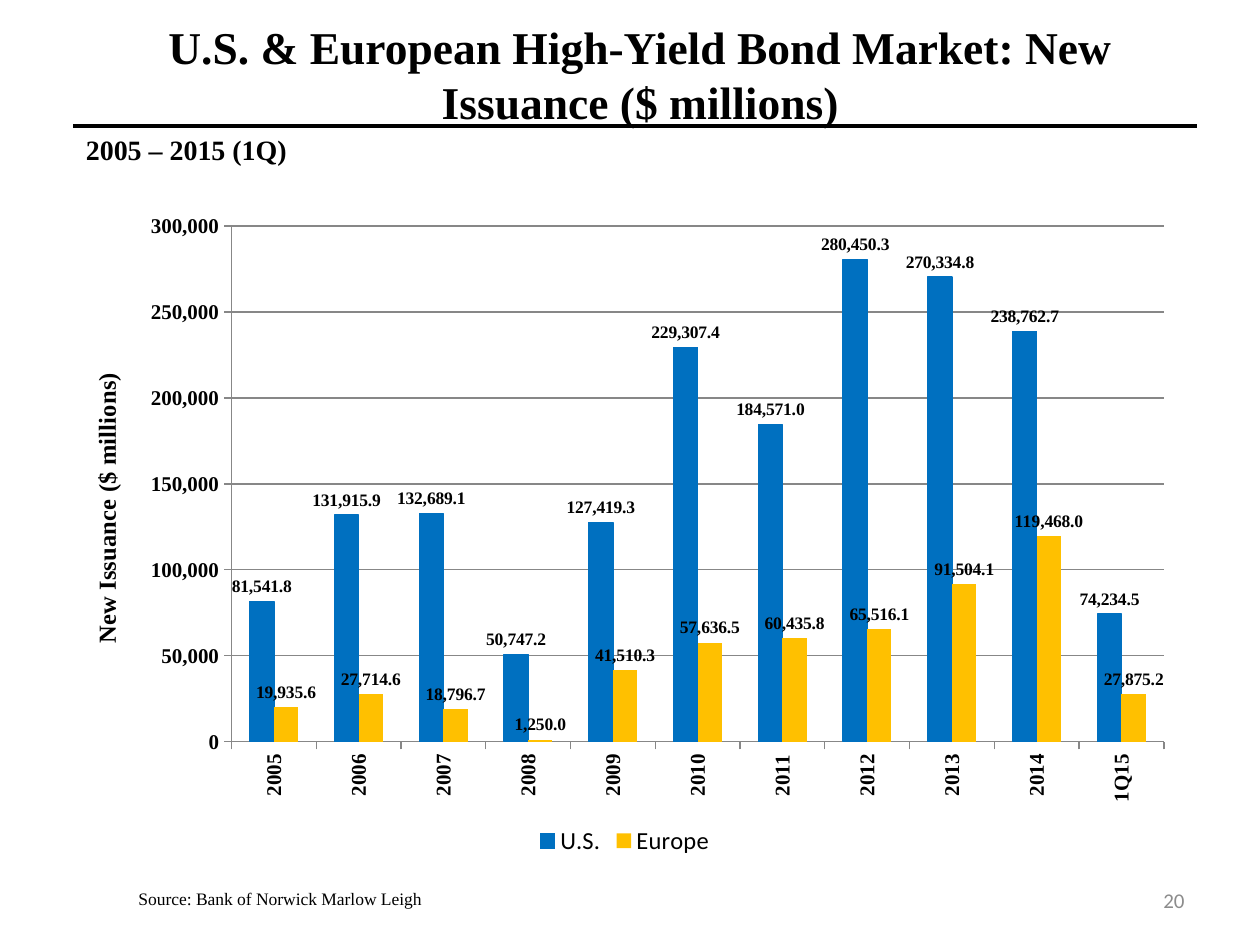
from lxml.etree import SubElement
from pptx import Presentation
from pptx.chart.data import CategoryChartData
from pptx.dml.color import RGBColor
from pptx.enum.chart import XL_CHART_TYPE, XL_LABEL_POSITION, XL_LEGEND_POSITION, XL_TICK_MARK
from pptx.enum.shapes import MSO_CONNECTOR
from pptx.enum.text import MSO_ANCHOR, PP_ALIGN
from pptx.oxml.ns import qn
from pptx.util import Pt

YEARS = [str(year) for year in range(2005, 2015)] + ["1Q15"]
US = [81541.8, 131915.9, 132689.1, 50747.2, 127419.3, 229307.4,
      184571, 280450.3, 270334.8, 238762.7, 74234.5]
EUROPE = [19935.6, 27714.6, 18796.7, 1250, 41510.3, 57636.5,
          60435.8, 65516.1, 91504.1, 119468, 27875.2]


def color(value):
    return RGBColor.from_string(value)


def set_font(font, size, name, bold=False, fill="000000"):
    font.size, font.name, font.bold = Pt(size), name, bold
    font.color.rgb = color(fill)


def write(tf, text, size=12, name="Times New Roman", bold=False,
          fill="000000", align=PP_ALIGN.LEFT, anchor=MSO_ANCHOR.TOP):
    tf.word_wrap = True
    tf.vertical_anchor = anchor
    p = tf.paragraphs[0]
    p.alignment = align
    r = p.add_run()
    r.text = text
    set_font(r.font, size, name, bold, fill)


class SlideBuilder:
    serif, sans = "Times New Roman", "Calibri"
    ink, grid = "000000", "878787"

    def __init__(self, prs):
        self.s = prs.slides.add_slide(prs.slide_layouts[6])

    def text(self, x, y, w, h, text, **fmt):
        sp = self.s.shapes.add_textbox(Pt(x), Pt(y), Pt(w), Pt(h))
        write(sp.text_frame, text, **fmt)

    def rule(self, x1, x2, y, width):
        line = self.s.shapes.add_connector(
            MSO_CONNECTOR.STRAIGHT, Pt(x1), Pt(y), Pt(x2), Pt(y))
        line.line.color.rgb = color(self.ink)
        line.line.width = Pt(width)
        SubElement(line._element.spPr, qn("a:effectLst"))

    def column_chart(self, x, y, w, h, cats, series, title, top, step, plot):
        data = CategoryChartData()
        data.categories = cats
        for name, values, _ in series:
            data.add_series(name, values)
        chart = self.s.shapes.add_chart(
            XL_CHART_TYPE.COLUMN_CLUSTERED, Pt(x), Pt(y), Pt(w), Pt(h), data).chart
        set_font(chart.font, 18, self.sans)
        chart.has_title = False

        # Legend
        chart.has_legend = True
        chart.legend.position = XL_LEGEND_POSITION.BOTTOM
        chart.legend.include_in_layout = False
        set_font(chart.legend.font, 14, self.sans)

        # Axes
        cat_axis, val_axis = chart.category_axis, chart.value_axis
        for axis in (cat_axis, val_axis):
            axis.major_tick_mark = XL_TICK_MARK.OUTSIDE
            axis.format.line.color.rgb = color(self.grid)
            set_font(axis.tick_labels.font, 12, self.serif, True)
        cat_axis._element.txPr.find(qn("a:bodyPr")).set("rot", "-5400000")
        val_axis.minimum_scale, val_axis.maximum_scale = 0, top
        val_axis.major_unit = step
        val_axis.major_gridlines.format.line.color.rgb = color(self.grid)
        val_axis.tick_labels.number_format = "#,##0"
        val_axis.tick_labels.number_format_is_linked = False
        tf = val_axis.axis_title.text_frame
        write(tf, title, size=14, bold=True, align=PP_ALIGN.CENTER)
        tf._txBody.find(qn("a:bodyPr")).set("rot", "-5400000")

        # Columns and their labels
        bars = chart.plots[0]
        bars.gap_width, bars.overlap = 150, 0
        bars.vary_by_categories = False
        for ser, (_, _, fill) in zip(bars.series, series):
            ser.format.fill.solid()
            ser.format.fill.fore_color.rgb = color(fill)
            labels = ser.data_labels
            labels.show_value = True
            labels.position = XL_LABEL_POSITION.OUTSIDE_END
            labels.number_format = "#,##0.0"
            labels.number_format_is_linked = False
            set_font(labels.font, 10, self.serif, True)
        us_line = bars.series[0].format.line
        us_line.color.rgb, us_line.width = color(series[0][2]), Pt(0.75)

        # Inner plot area as fractions of the chart
        area = chart._chartSpace.chart.plotArea
        for old in area.findall(qn("c:layout")):
            area.remove(old)
        layout = area.makeelement(qn("c:layout"))
        area.insert(0, layout)
        manual = SubElement(layout, qn("c:manualLayout"))
        settings = [("layoutTarget", "inner"), ("xMode", "edge"), ("yMode", "edge")]
        for tag, value in settings + list(zip("xywh", plot)):
            SubElement(manual, qn(f"c:{tag}")).set("val", str(value))


def main():
    prs = Presentation()
    prs.slide_width, prs.slide_height = Pt(720), Pt(540)
    slide = SlideBuilder(prs)

    # Heading
    slide.text(42, 18, 648, 48,
               "U.S. & European High-Yield Bond Market: New Issuance ($ millions)",
               size=26, bold=True, align=PP_ALIGN.CENTER, anchor=MSO_ANCHOR.MIDDLE)
    slide.rule(42, 684, 72, 2.25)
    slide.text(42, 72, 186, 27, "2005 – 2015 (1Q)", size=16, bold=True)

    # Issuance by year
    slide.column_chart(36, 114, 642, 378, YEARS,
                       [("U.S.", US, "0070C0"), ("Europe", EUROPE, "FFC000")],
                       "New Issuance ($ millions)", 300000, 50000,
                       plot=(0.15, 0.04, 0.83, 0.78))

    # Footer
    slide.text(72, 504, 420, 20, "Source: Bank of Norwick Marlow Leigh", size=10)
    slide.text(516, 500, 168, 29, "20", name="Calibri", fill="8C8C8C",
               align=PP_ALIGN.RIGHT, anchor=MSO_ANCHOR.MIDDLE)

    prs.save("out.pptx")


if __name__ == "__main__":
    main()
